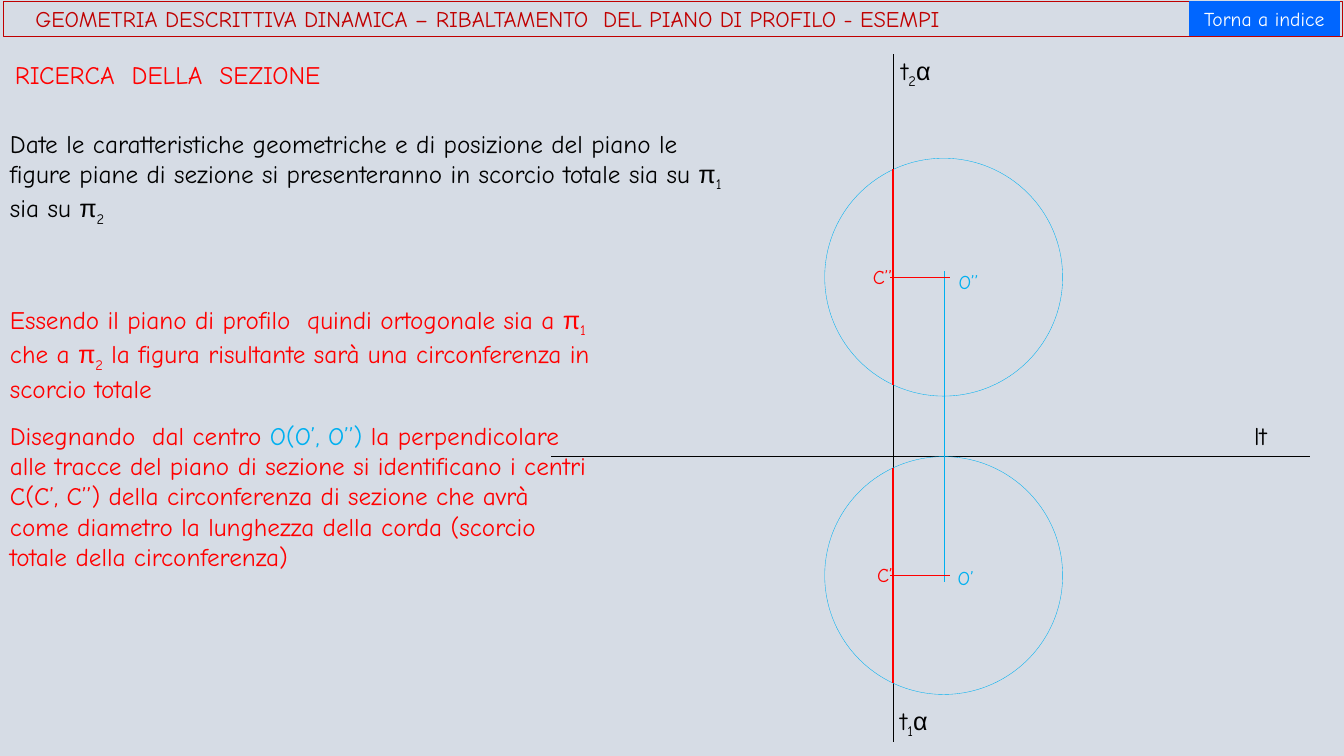
from math import sqrt
from pptx import Presentation
from pptx import util as u
from pptx.dml.color import RGBColor
from pptx.enum import shapes, text
from pptx.oxml.ns import qn
from lxml import etree

COLORS = {"bg": "D6DCE5", "black": "000000", "dark_red": "C00000", "red": "FF0000",
          "cyan": "00B0F0", "blue": "0066FF", "white": "FFFFFF"}
FONT, GREEK_FONT = "Comic Neue", "Arial"

TITLE = "GEOMETRIA DESCRITTIVA DINAMICA – RIBALTAMENTO  DEL PIANO DI PROFILO - ESEMPI"
BUTTON = "Torna a indice"
PI1, PI2 = [("π", "greek"), ("1", "sub")], [("π", "greek"), ("2", "sub")]
ALPHA = ("α", "greek")

TEXTS = [
    (0.05, 0.54, 3.93, 0.4, 18, "red", [("RICERCA  DELLA  SEZIONE", "")]),
    (0, 1.22, 7.32, 1.01, 18, "black", [
        ("Date le caratteristiche geometriche e di posizione del piano le figure piane "
         "di sezione si presenteranno in scorcio totale sia su ", ""),
        *PI1, (" sia su ", ""), *PI2]),
    (0, 2.97, 6.34, 1.01, 18, "red", [
        ("Essendo il piano di profilo  quindi ortogonale sia a ", ""), *PI1,
        (" che a ", ""), *PI2,
        (" la figura risultante sarà una circonferenza in scorcio totale", "")]),
    (0, 4.12, 5.93, 1.62, 18, "red", [
        ("Disegnando  dal centro ", ""), ("O(O’, O’’) ", "cyan"),
        ("la perpendicolare alle tracce del piano di sezione si identificano i centri "
         "C(C’, C’’) della circonferenza di sezione che avrà come diametro la lunghezza "
         "della corda (scorcio totale della circonferenza)", "")]),
    (12.34, 4.12, 0.56, 0.4, 18, "black", [("lt", "")]),
    (8.84, 0.5, 0.86, 0.4, 18, "black", [("t", ""), ("2", "sub"), ALPHA]),
    (8.83, 6.95, 0.56, 0.4, 18, "black", [("t", ""), ("1", "sub"), ALPHA]),
    (9.41, 2.63, 0.47, 0.34, 14, "cyan", [("O’’", "")]),
    (9.4, 5.57, 0.45, 0.34, 14, "cyan", [("O’", "")]),
    (8.56, 2.58, 0.47, 0.34, 14, "red", [("C’’", "")]),
    (8.6, 5.54, 0.45, 0.34, 14, "red", [("C’", "")]),
]

CENTER_X, CENTERS_Y, RADIUS = 9.36, (2.75, 5.71), 1.18
PLANE_X, GROUND_Y = 8.86, 4.53
TICK = 0.06


def rgb(name):
    return RGBColor.from_string(COLORS[name])


def box(*lengths):
    return [u.Inches(n) for n in lengths]


def style(r, size, color, kind=""):
    r.font.size = u.Pt(size)
    r.font.name = GREEK_FONT if kind == "greek" else FONT
    r.font.color.rgb = rgb(kind if kind in COLORS else color)
    if kind == "sub":
        r._r.get_or_add_rPr().set("baseline", "-25000")


def add_text(s, x, y, w, h, size, color, runs):
    tf = s.shapes.add_textbox(*box(x, y, w, h)).text_frame
    tf.word_wrap = True
    for words, kind in runs:
        r = tf.paragraphs[0].add_run()
        r.text = words
        style(r, size, color, kind)


def add_line(s, x1, y1, x2, y2, color, width=0.25):
    ln = s.shapes.add_connector(shapes.MSO_CONNECTOR.STRAIGHT, *box(x1, y1, x2, y2))
    ln.line.color.rgb = rgb(color)
    ln.line.width = u.Pt(width)
    etree.SubElement(ln._element.spPr, qn("a:effectLst"))


def fill_bar(sp, words, size, color, align):
    tf = sp.text_frame
    tf.text = words
    tf.word_wrap = True
    tf.vertical_anchor = text.MSO_ANCHOR.MIDDLE
    tf.margin_top = tf.margin_bottom = 0
    p = tf.paragraphs[0]
    p.alignment = align
    style(p.runs[0], size, color)


def main():
    prs = Presentation()
    prs.slide_width, prs.slide_height = box(13.33, 7.5)
    s = prs.slides.add_slide(prs.slide_layouts[5])
    s.background.fill.solid()
    s.background.fill.fore_color.rgb = rgb("bg")

    title = s.shapes.title
    title.left, title.top, title.width, title.height = box(0.03, 0.01, 13.28, 0.35)
    title.line.color.rgb = rgb("dark_red")
    title.line.width = u.Pt(0.25)
    fill_bar(title, TITLE, 16, "dark_red", text.PP_ALIGN.LEFT)
    title.text_frame.margin_left = u.Inches(0.32)
    title.text_frame.auto_size = text.MSO_AUTO_SIZE.NONE

    button = s.shapes.add_shape(shapes.MSO_SHAPE.ACTION_BUTTON_CUSTOM,
                                *box(11.79, 0.01, 1.5, 0.35))
    button.shadow.inherit = False
    button.fill.solid()
    button.fill.fore_color.rgb = rgb("blue")
    button.line.fill.background()
    fill_bar(button, BUTTON, 14, "white", text.PP_ALIGN.CENTER)

    add_line(s, 5.47, GROUND_Y, 12.99, GROUND_Y, "black")
    add_line(s, PLANE_X, 0.54, PLANE_X, 7.36, "black")
    add_line(s, CENTER_X, CENTERS_Y[0] - TICK, CENTER_X, CENTERS_Y[1] + TICK, "cyan")

    half_chord = sqrt(RADIUS ** 2 - (CENTER_X - PLANE_X) ** 2)
    for y in CENTERS_Y:
        circle = s.shapes.add_shape(shapes.MSO_SHAPE.OVAL, *box(
            CENTER_X - RADIUS, y - RADIUS, 2 * RADIUS, 2 * RADIUS))
        circle.shadow.inherit = False
        circle.fill.background()
        circle.line.color.rgb = rgb("cyan")
        circle.line.width = u.Pt(0.25)
        add_line(s, CENTER_X - TICK, y, CENTER_X + TICK, y, "cyan")
        add_line(s, PLANE_X, y - half_chord, PLANE_X, y + half_chord, "red", 1.5)
        add_line(s, PLANE_X - TICK / 2, y, CENTER_X + TICK, y, "red")

    for item in TEXTS:
        add_text(s, *item)
    prs.save("out.pptx")


if __name__ == "__main__":
    main()
